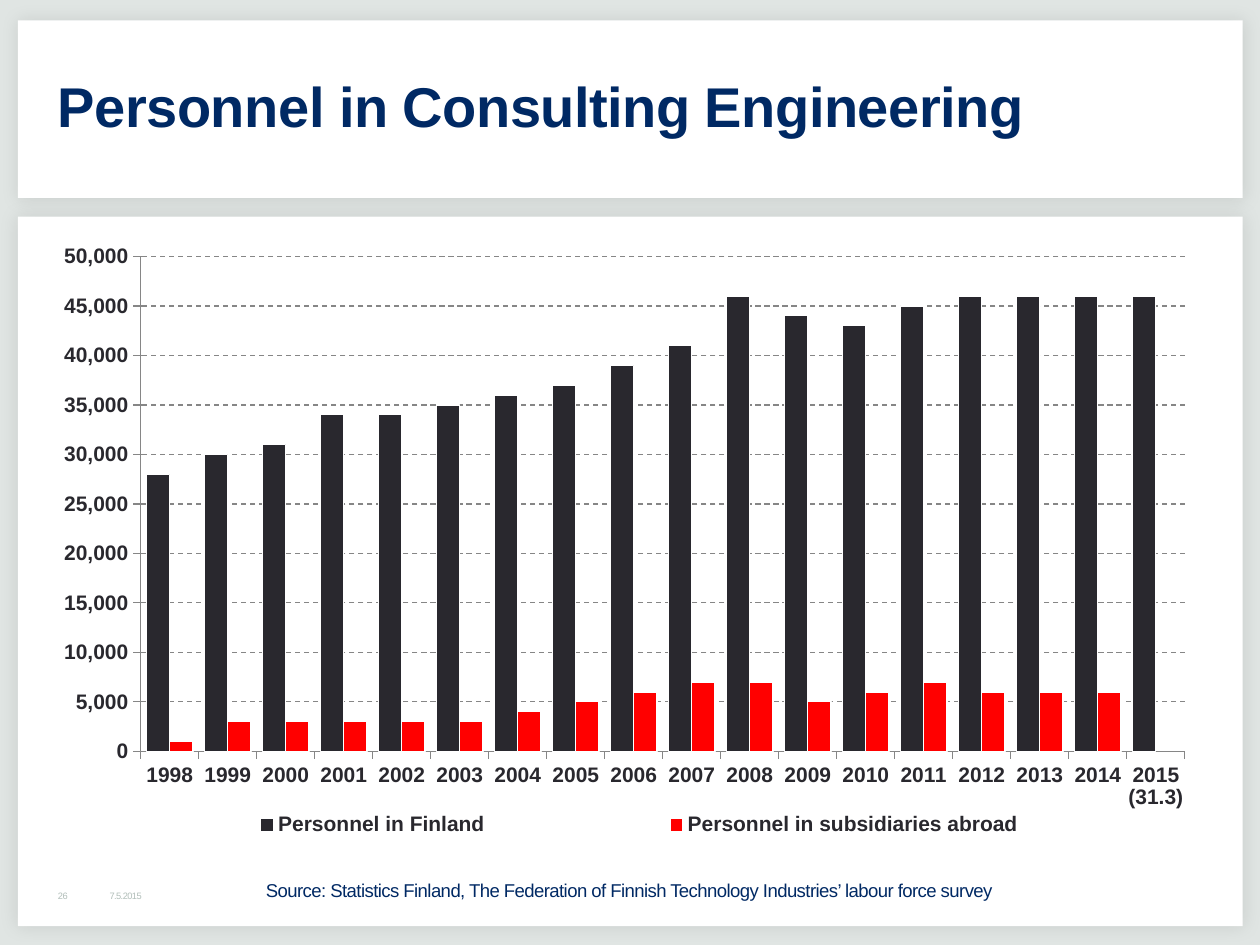
from lxml import etree
from pptx import Presentation
from pptx.chart.data import CategoryChartData
from pptx.dml.color import RGBColor
from pptx.enum.chart import XL_CHART_TYPE, XL_LEGEND_POSITION, XL_TICK_MARK
from pptx.enum.dml import MSO_LINE
from pptx.enum.shapes import MSO_SHAPE
from pptx.enum.text import MSO_ANCHOR
from pptx.oxml import parse_xml
from pptx.oxml.ns import nsdecls, qn
from pptx.util import Cm, Pt

COLUMNS = XL_CHART_TYPE.COLUMN_CLUSTERED
LEGEND_BOTTOM = XL_LEGEND_POSITION.BOTTOM
TICK_OUTSIDE = XL_TICK_MARK.OUTSIDE
DASH = MSO_LINE.DASH
RECTANGLE = MSO_SHAPE.RECTANGLE
MIDDLE = MSO_ANCHOR.MIDDLE
TOP = MSO_ANCHOR.TOP

NAVY = "002964"
CHARCOAL = "29282E"
RED = "FF0000"
WHITE = "FFFFFF"
PALE_GREY = "B1BEB9"
AXIS_GREY = "868686"
FONT = "Arial"


def color(value):
    return RGBColor.from_string(value)


def chart_layout(x, y, width, height, inner=False):
    layout = parse_xml(f"<c:layout {nsdecls('c')}><c:manualLayout/></c:layout>")
    settings = [("layoutTarget", "inner")] if inner else []
    settings += [("xMode", "edge"), ("yMode", "edge"),
                 ("x", x), ("y", y), ("w", width), ("h", height)]
    for name, value in settings:
        etree.SubElement(layout[0], qn(f"c:{name}")).set("val", str(value))
    return layout


presentation = Presentation()
presentation.slide_width = Cm(25.4)
presentation.slide_height = Cm(19.05)
slide = presentation.slides.add_slide(presentation.slide_layouts[6])
slide.background.fill.solid()
slide.background.fill.fore_color.rgb = color("E0E5E3")

for top, height in [(0.41, 3.58), (4.37, 14.3)]:
    panel = slide.shapes.add_shape(RECTANGLE, Cm(0.36), Cm(top), Cm(24.69), Cm(height))
    panel.fill.solid()
    panel.fill.fore_color.rgb = color(WHITE)
    panel.line.fill.background()
    panel.shadow.inherit = False
    effects = panel.element.spPr.find(qn("a:effectLst"))
    effects.append(parse_xml(
        f'<a:outerShdw {nsdecls("a")} blurRad="{Pt(10)}" dist="0" dir="2700000">'
        '<a:srgbClr val="000000"><a:alpha val="10000"/></a:srgbClr></a:outerShdw>'))

texts = [
    ("7.5.2015", (2.11, 17.86, 3.18, 0.41), (0.1, 0.1, 0.1, 0.1), MIDDLE, 5.3, PALE_GREY, False),
    ("26", (1.07, 17.86, 1.04, 0.41), (0.1, 0.1, 0.1, 0.1), MIDDLE, 5.3, PALE_GREY, False),
    ("Personnel in Consulting Engineering", (1.07, 0.79, 23.29, 2.77),
     (0.1, 0.13, 0.25, 0.13), MIDDLE, 32, NAVY, True),
    ("Source: Statistics Finland, The Federation of Finnish Technology Industries’ labour force survey",
     (5.28, 17.63, 14.99, 0.64), (0.08, 0.08, 0.08, 0.08), TOP, 10.6, NAVY, False),
]
for text, position, insets, anchor, size, text_color, bold in texts:
    text_box = slide.shapes.add_textbox(*map(Cm, position))
    frame = text_box.text_frame
    frame.word_wrap = True
    frame.vertical_anchor = anchor
    frame.margin_left, frame.margin_top, frame.margin_right, frame.margin_bottom = map(Cm, insets)
    paragraph = frame.paragraphs[0]
    paragraph.line_spacing = 0.95 if bold else 1.0
    run = paragraph.add_run()
    run.text = text
    run.font.name = FONT
    run.font.size = Pt(size)
    run.font.bold = bold
    run.font.color.rgb = color(text_color)
    run.font._element.set("spc", "-30")

finland = [28, 30, 31, 34, 34, 35, 36, 37, 39, 41, 46, 44, 43, 45, 46, 46, 46, 46]
abroad = [1, 3, 3, 3, 3, 3, 4, 5, 6, 7, 7, 5, 6, 7, 6, 6, 6, None]
chart_data = CategoryChartData(number_format="#,##0")
chart_data.categories = [str(year) for year in range(1998, 2015)] + ["2015 (31.3)"]
for name, thousands in [("Personnel in Finland", finland),
                        ("Personnel in subsidiaries abroad", abroad)]:
    chart_data.add_series(name, [None if value is None else value * 1000 for value in thousands])

chart = slide.shapes.add_chart(COLUMNS, Cm(0.71), Cm(4.8), Cm(23.65), Cm(12.32), chart_data).chart
chart.has_title = False
chart.font.name = FONT
chart.font.size = Pt(12)
chart.font.bold = True
chart.font.color.rgb = color(CHARCOAL)

plot = chart.plots[0]
plot.gap_width = 50
plot.overlap = 0
plot.vary_by_categories = False
for series, series_color in zip(plot.series, [CHARCOAL, RED]):
    series.format.fill.solid()
    series.format.fill.fore_color.rgb = color(series_color)
    series.format.line.color.rgb = color(WHITE)
    series.format.line.width = Pt(0.75)

for axis in (chart.category_axis, chart.value_axis):
    axis.major_tick_mark = TICK_OUTSIDE
    axis.format.line.color.rgb = color(AXIS_GREY)
    axis.format.line.width = Pt(0.75)
    axis.tick_labels.font.name = FONT
    axis.tick_labels.font.size = Pt(12)
    axis.tick_labels.font.bold = True
    axis.tick_labels.font.color.rgb = color(CHARCOAL)

value_axis = chart.value_axis
value_axis.minimum_scale = 0
value_axis.maximum_scale = 50000
value_axis.major_unit = 5000
value_axis.tick_labels.number_format = "#,##0"
value_axis.tick_labels.number_format_is_linked = False
value_axis.has_major_gridlines = True
gridline = value_axis.major_gridlines.format.line
gridline.color.rgb = color(AXIS_GREY)
gridline.width = Pt(0.75)
gridline.dash_style = DASH

chart.has_legend = True
legend = chart.legend
legend.position = LEGEND_BOTTOM
legend.include_in_layout = False
legend.font.name = FONT
legend.font.size = Pt(12)
legend.font.bold = True
legend.font.color.rgb = color(CHARCOAL)

plot_area = chart.element.chart.plotArea
for old_layout in plot_area.findall(qn("c:layout")):
    plot_area.remove(old_layout)
plot_area.insert(0, chart_layout(0.09, 0.03, 0.89, 0.81, inner=True))
legend_element = chart.element.chart.find(qn("c:legend"))
for old_layout in legend_element.findall(qn("c:layout")):
    legend_element.remove(old_layout)
legend_element.find(qn("c:legendPos")).addnext(chart_layout(0.04, 0.93, 0.95, 0.06))

presentation.save("out.pptx")
